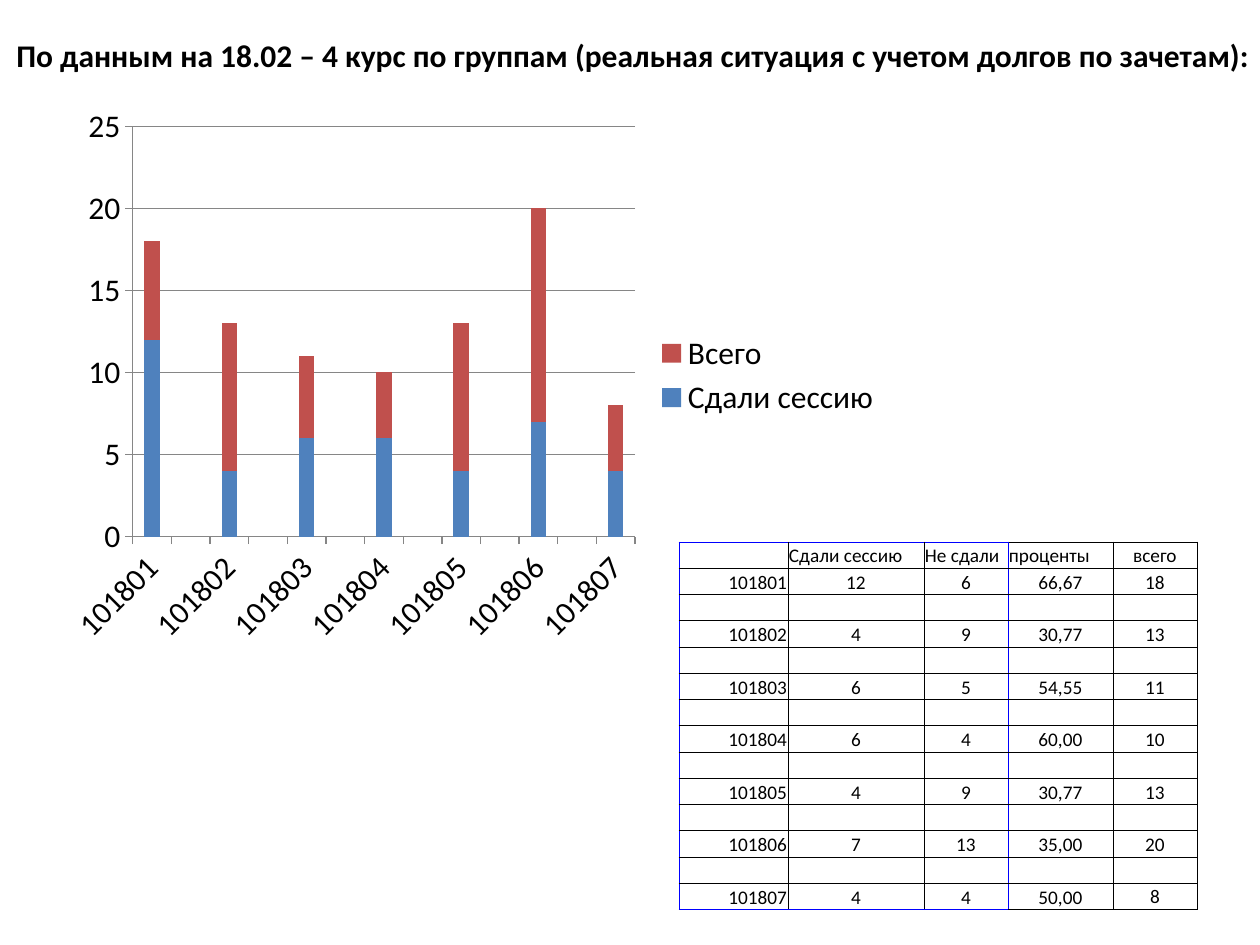
from dataclasses import dataclass

from lxml import etree
from pptx import Presentation
from pptx import util as u
from pptx.chart.data import CategoryChartData
from pptx.dml.color import RGBColor
from pptx.enum import chart as ch, text
from pptx.oxml.ns import qn

SCALE = 914400 / 126
LEFT, MID, RIGHT = text.PP_ALIGN.LEFT, text.PP_ALIGN.CENTER, text.PP_ALIGN.RIGHT


@dataclass
class Theme:
    font: str = "Calibri"
    big: int = 18
    small: int = 11
    ink: str = "000000"
    edge: str = "0000FF"
    grid: str = "868686"
    passed: str = "4F81BD"
    total: str = "C0504D"


def px(n):
    return u.Emu(round(n * SCALE))


def put(obj, **vals):
    for name, val in vals.items():
        setattr(obj, name, val)


class Deck:
    def __init__(self, theme):
        self.theme = theme
        self.prs = Presentation()
        put(self.prs, slide_width=px(1260), slide_height=px(945))
        self.slide = self.prs.slides.add_slide(self.prs.slide_layouts[6])

    def style(self, font, size, bold=False):
        put(font, name=self.theme.font, size=u.Pt(size), bold=bold)
        font.color.rgb = RGBColor.from_string(self.theme.ink)

    def title(self, words, *box):
        frame = self.slide.shapes.add_textbox(*map(px, box)).text_frame
        put(frame, word_wrap=False, auto_size=text.MSO_AUTO_SIZE.SHAPE_TO_FIT_TEXT)
        run = frame.paragraphs[0].add_run()
        run.text = words
        self.style(run.font, self.theme.big, True)

    def chart(self, cats, series, *box):
        """Stacked columns; series holds (name, values, colour)."""
        data = CategoryChartData()
        data.categories = cats
        for name, vals, _ in series:
            data.add_series(name, vals)
        chart = self.slide.shapes.add_chart(
            ch.XL_CHART_TYPE.COLUMN_STACKED, *map(px, box), data).chart
        put(chart, has_title=False, has_legend=True)
        put(chart.legend, position=ch.XL_LEGEND_POSITION.RIGHT, include_in_layout=False)
        self.style(chart.font, self.theme.big)
        plot = chart.plots[0]
        put(plot, gap_width=150, overlap=100, vary_by_categories=False)
        for ser, (_, _, hue) in zip(plot.series, series):
            ser.format.fill.solid()
            ser.format.fill.fore_color.rgb = RGBColor.from_string(hue)
        for axis in (chart.category_axis, chart.value_axis):
            put(axis, major_tick_mark=ch.XL_TICK_MARK.OUTSIDE,
                minor_tick_mark=ch.XL_TICK_MARK.NONE)
            axis.format.line.color.rgb = RGBColor.from_string(self.theme.grid)
        chart.value_axis.has_major_gridlines = True
        line = chart.value_axis.major_gridlines.format.line
        line.color.rgb = RGBColor.from_string(self.theme.grid)

    def border(self, cell, blue):
        """Rule all four sides; those named in blue take the edge colour."""
        props = cell._tc.get_or_add_tcPr()
        for spot, side in enumerate("LRTB"):
            line = etree.Element(qn(f"a:ln{side}"), w=str(u.Pt(0.5)))
            fill = etree.SubElement(line, qn("a:solidFill"))
            hue = self.theme.edge if side in blue else self.theme.ink
            etree.SubElement(fill, qn("a:srgbClr"), val=hue)
            props.insert(spot, line)

    def cell(self, cell, words, align, anchor, blue):
        put(cell, margin_left=px(1), margin_right=px(1), margin_top=px(1),
            margin_bottom=0, vertical_anchor=anchor)
        cell.fill.background()
        para = cell.text_frame.paragraphs[0]
        para.alignment = align
        if words:
            run = para.add_run()
            run.text = words
            self.style(run.font, self.theme.small)
        else:
            end = para._p.get_or_add_endParaRPr()
            end.set("sz", str(self.theme.small * 100))
        self.border(cell, blue)

    def table(self, rows, cols, left, top, high):
        shape = self.slide.shapes.add_table(
            len(rows), len(cols), px(left), px(top), px(sum(cols)), px(high))
        grid = shape.table
        put(grid, first_row=False, horz_banding=False)
        for col, wide in zip(grid.columns, cols):
            col.width = px(wide)
        last = len(rows) - 1
        for i, row in enumerate(rows):
            grid.rows[i].height = px(high / len(rows))
            for j, words in enumerate(row):
                blue = ("L", "", "R", "L", "")[j]
                if j < 3:
                    blue += {0: "T", last: "B"}.get(i, "")
                align = RIGHT if j == 0 else LEFT if i == 0 and j < 4 else MID
                anchor = text.MSO_ANCHOR.BOTTOM
                if (i, j) == (last, 4):
                    anchor = text.MSO_ANCHOR.MIDDLE
                self.cell(grid.cell(i, j), words, align, anchor, blue)


def spread(items, gap):
    """Put gap between neighbouring items."""
    return [x for item in items for x in (item, gap)][:-1]


def main():
    theme = Theme()
    deck = Deck(theme)
    groups = [str(101801 + n) for n in range(7)]
    passed = [12, 4, 6, 6, 4, 7, 4]
    failed = [6, 9, 5, 4, 9, 13, 4]

    deck.chart(spread(groups, ""),
               [("Сдали сессию", spread(passed, None), theme.passed),
                ("Всего", spread(failed, None), theme.total)],
               54, 96, 840, 559)
    deck.title("По данным на 18.02 – 4 курс по группам "
               "(реальная ситуация с учетом долгов по зачетам):", 4, 30, 1271, 50)

    head = ["", "Сдали сессию", "Не сдали", "проценты", "всего"]
    body = []
    for group, good, bad in zip(groups, passed, failed):
        share = f"{100 * good / (good + bad):.2f}".replace(".", ",")
        body.append([group, str(good), str(bad), share, str(good + bad)])
    deck.table([head] + spread(body, [""] * 5), [109, 136, 84, 105, 84], 679, 542, 368)
    deck.prs.save("out.pptx")


if __name__ == "__main__":
    main()
